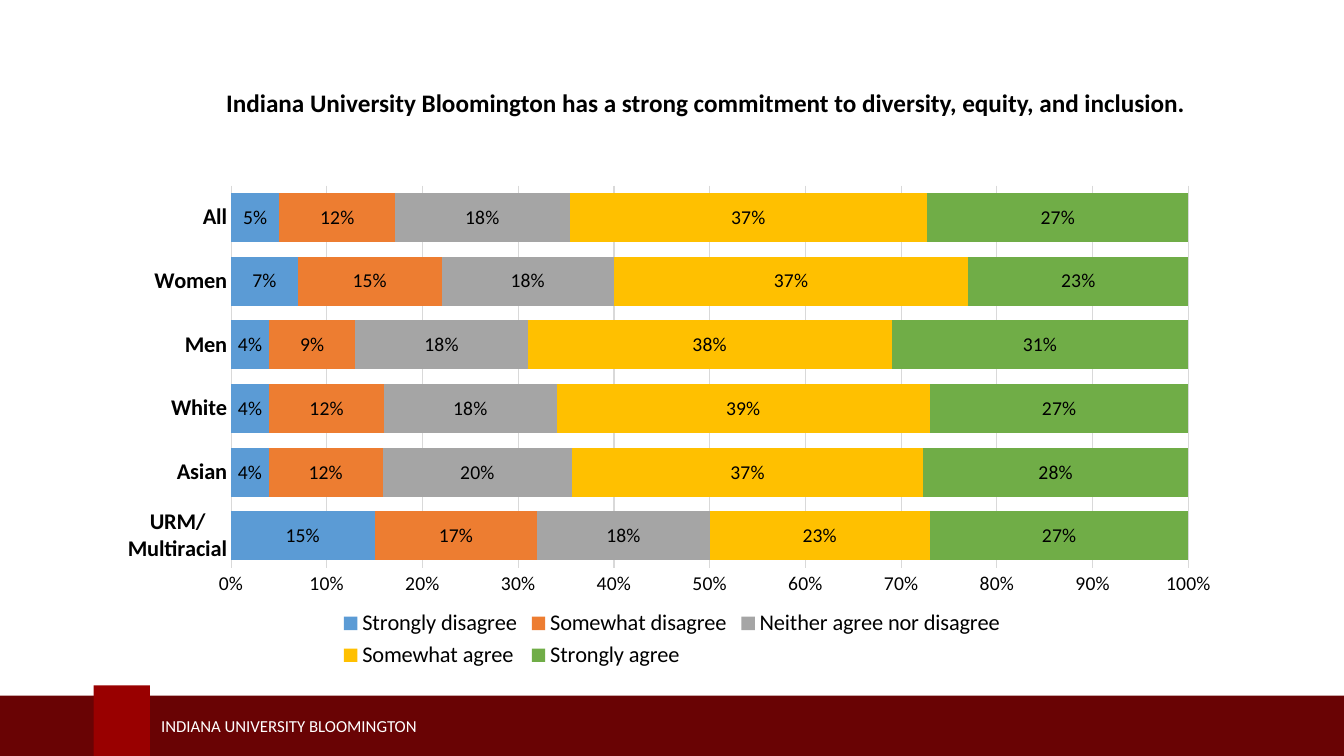
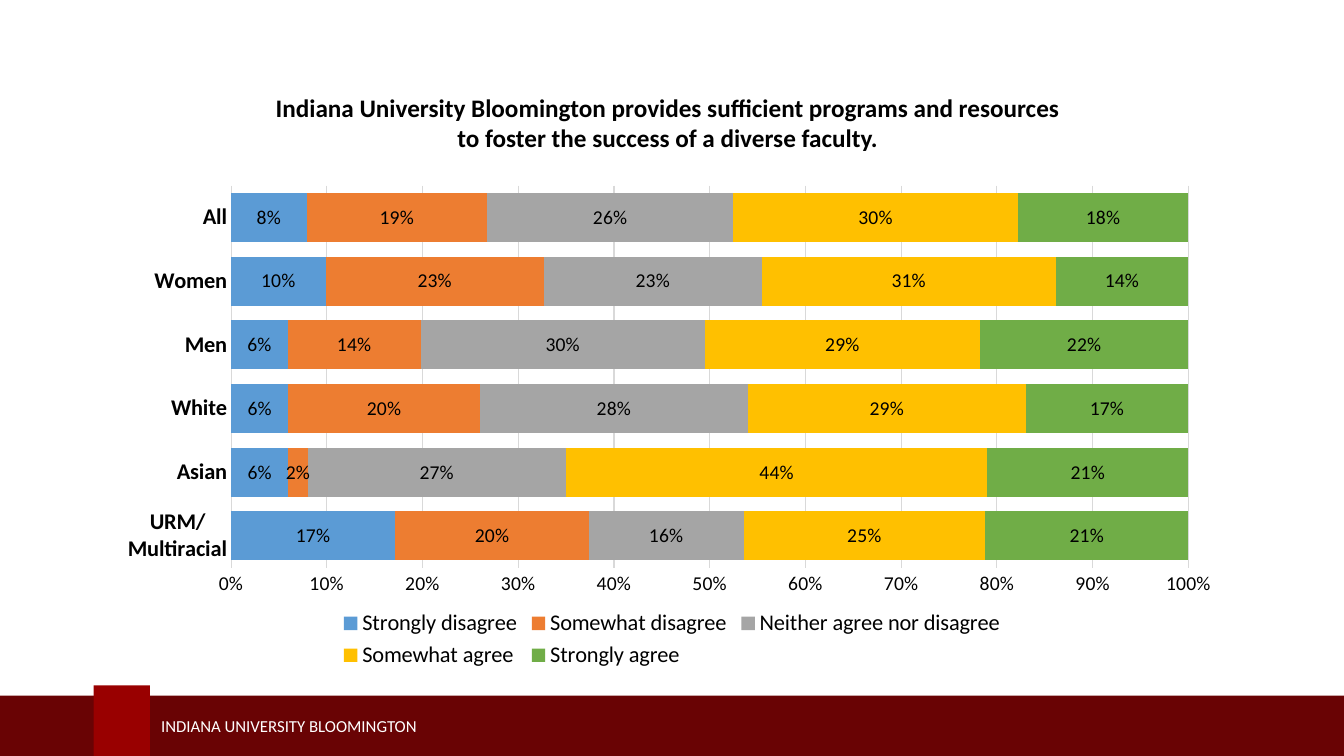
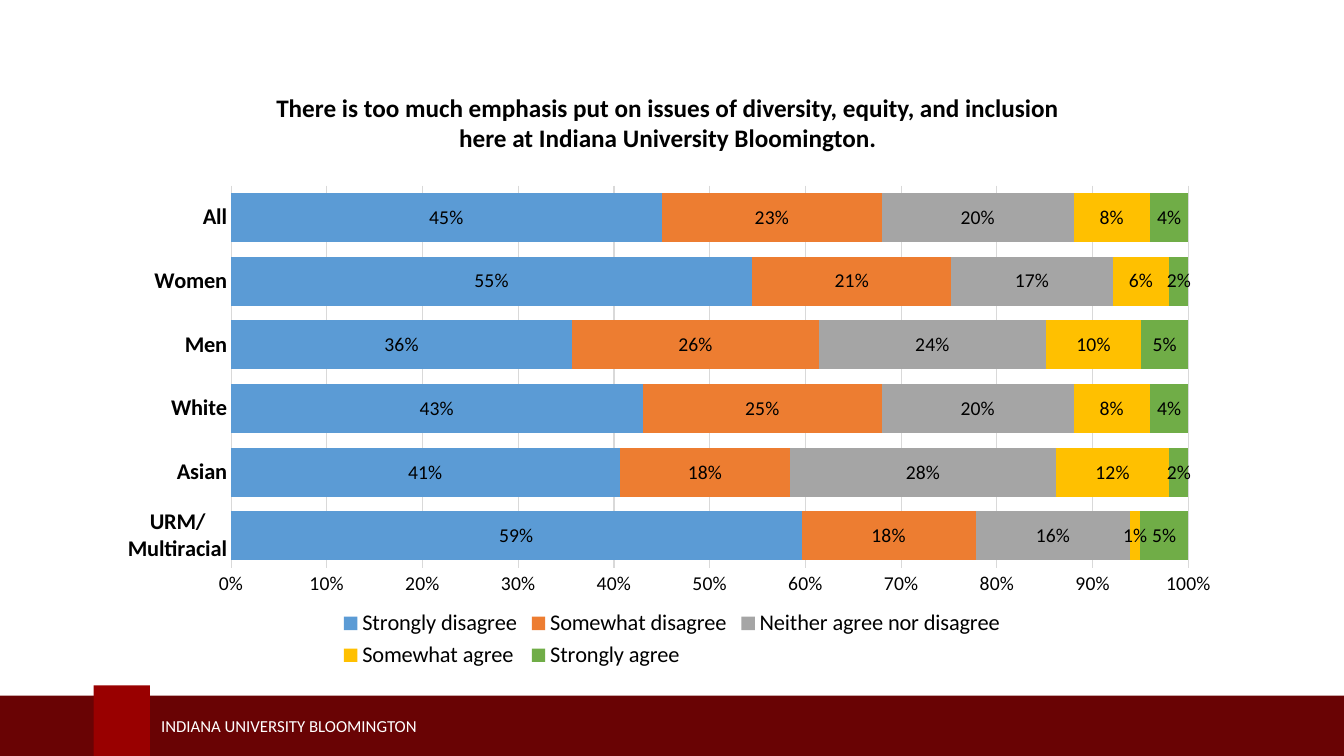
from dataclasses import dataclass

from lxml import etree
from pptx import Presentation
from pptx.chart.data import CategoryChartData
from pptx.dml.color import RGBColor
from pptx.enum import chart as kinds, shapes, text
from pptx.oxml.ns import qn
from pptx.util import Cm, Pt


@dataclass(frozen=True)
class Theme:
    font: str = "Calibri"
    ink: str = "000000"
    pale: str = "FFFFFF"
    grid: str = "D9D9D9"
    band: str = "690304"
    tab: str = "990000"
    bars: tuple = ("5B9BD5", "ED7D31", "A5A5A5", "FFC000", "70AD47")
    head: int = 18
    key: int = 16
    label: int = 14
    foot: int = 12
    wide: float = 33.87
    high: float = 19.05


THEME = Theme()
ANSWERS = ("Strongly disagree", "Somewhat disagree", "Neither agree nor disagree",
           "Somewhat agree", "Strongly agree")
GROUPS = ("URM/\nMultiracial", "Asian", "White", "Men", "Women", "All")

# Each entry: title, title left and top in cm, percentages by answer and group.
POLLS = (
    ("Indiana University Bloomington has a strong commitment to diversity, equity, and inclusion.",
     4.79, 2.2,
     ((15, 4, 4, 4, 7, 5),
      (17, 12, 12, 9, 15, 12),
      (18, 20, 18, 18, 18, 18),
      (23, 37, 39, 38, 37, 37),
      (27, 28, 27, 31, 23, 27))),
    ("Indiana University Bloomington provides sufficient programs and resources\v"
     "to foster the success of a diverse faculty.",
     3.83, 2.33,
     ((17, 6, 6, 6, 10, 8),
      (20, 2, 20, 14, 23, 19),
      (16, 27, 28, 30, 23, 26),
      (25, 44, 29, 29, 31, 30),
      (21, 21, 17, 22, 14, 18))),
    ("There is too much emphasis put on issues of diversity, equity, and inclusion\v"
     "here at Indiana University Bloomington.",
     3.83, 2.33,
     ((59, 41, 43, 36, 55, 45),
      (18, 18, 25, 26, 21, 23),
      (16, 28, 20, 24, 17, 20),
      (1, 12, 8, 10, 6, 8),
      (5, 2, 4, 5, 2, 4))),
)


def put(item, **values):
    """Set several attributes of one object."""
    for name, value in values.items():
        setattr(item, name, value)


def paint(fill, color):
    fill.solid()
    fill.fore_color.rgb = RGBColor.from_string(color)


def style(font, size, color=THEME.ink, bold=False):
    put(font, name=THEME.font, size=Pt(size), bold=bold)
    font.color.rgb = RGBColor.from_string(color)


def rule(line):
    line.width = Pt(0.75)
    line.color.rgb = RGBColor.from_string(THEME.grid)


def block(slide, left, top, width, color):
    """Draw a plain rectangle that reaches down to the slide's lower edge."""
    shape = slide.shapes.add_shape(shapes.MSO_SHAPE.RECTANGLE, Cm(left), Cm(top),
                                   Cm(width), Cm(THEME.high - top))
    shape.shadow.inherit = False
    paint(shape.fill, color)
    shape.line.fill.background()
    return shape


def sign(slide):
    box = slide.shapes.add_textbox(Cm(3.81), Cm(17.91), Cm(13.39), Cm(0.76))
    put(box.text_frame, word_wrap=True, text="INDIANA UNIVERSITY BLOOMINGTON",
        vertical_anchor=text.MSO_ANCHOR.MIDDLE)
    style(box.text_frame.paragraphs[0].runs[0].font, THEME.foot, THEME.pale)
    return box


def footer(slide, layout):
    """Draw the footer and move it to the layout, so that all slides share it."""
    for item in list(layout.placeholders):
        if item.placeholder_format.type != shapes.PP_PLACEHOLDER.TITLE:
            item.element.getparent().remove(item.element)
    parts = (block(slide, 0, 17.53, THEME.wide, THEME.band),
             block(slide, 2.36, 17.27, 1.42, THEME.tab),
             sign(slide))
    for part in parts:
        layout.shapes.element.append(part.element)


def heading(slide, words, left, top):
    title = slide.shapes.title
    put(title, left=Cm(left), top=Cm(top), width=Cm(26), height=Cm(1.7))
    frame = title.text_frame
    put(frame, text=words, word_wrap=True, auto_size=text.MSO_AUTO_SIZE.NONE,
        vertical_anchor=text.MSO_ANCHOR.TOP,
        margin_left=0, margin_right=0, margin_top=0, margin_bottom=0)
    line = frame.paragraphs[0]
    line.alignment = text.PP_ALIGN.CENTER
    for run in line.runs:
        style(run.font, THEME.head, bold=True)


def place(chart, **spots):
    """Fix the inner plot area, in fractions of the chart."""
    area = chart.element.xpath(".//c:plotArea")[0]
    for old in area.findall(qn("c:layout")):
        area.remove(old)
    layout = etree.Element(qn("c:layout"))
    area.insert(0, layout)
    manual = etree.SubElement(layout, qn("c:manualLayout"))
    marks = dict(layoutTarget="inner", xMode="edge", yMode="edge", **spots)
    for tag, value in marks.items():
        etree.SubElement(manual, qn(f"c:{tag}")).set("val", str(value))


def axes(chart):
    for axis in (chart.category_axis, chart.value_axis):
        put(axis, major_tick_mark=kinds.XL_TICK_MARK.NONE,
            minor_tick_mark=kinds.XL_TICK_MARK.NONE)
    groups, scale = chart.category_axis, chart.value_axis
    style(groups.tick_labels.font, THEME.key, bold=True)
    rule(groups.format.line)
    style(scale.tick_labels.font, THEME.label)
    put(scale, minimum_scale=0, maximum_scale=1, major_unit=0.1, has_major_gridlines=True)
    put(scale.tick_labels, number_format="0%", number_format_is_linked=False)
    scale.format.line.fill.background()
    rule(scale.major_gridlines.format.line)


def bars(slide, rows):
    data = CategoryChartData(number_format="0%")
    data.categories = GROUPS
    for name, row in zip(ANSWERS, rows):
        data.add_series(name, [value / 100 for value in row])
    chart = slide.shapes.add_chart(kinds.XL_CHART_TYPE.BAR_STACKED_100, Cm(1.06), Cm(4.3),
                                   Cm(31.75), Cm(12.67), data).chart
    put(chart, has_title=False, has_legend=True)
    style(chart.font, THEME.label)
    put(chart.legend, position=kinds.XL_LEGEND_POSITION.BOTTOM, include_in_layout=False)
    style(chart.legend.font, THEME.key)
    axes(chart)
    plot = chart.plots[0]
    put(plot, gap_width=30, overlap=100, vary_by_categories=False, has_data_labels=True)
    put(plot.data_labels, show_value=True, number_format="0%", number_format_is_linked=False,
        position=kinds.XL_LABEL_POSITION.CENTER)
    style(plot.data_labels.font, THEME.label)
    for series, color in zip(plot.series, THEME.bars):
        paint(series.format.fill, color)
    place(chart, x=0.15, y=0.03, w=0.76, h=0.76)


def main():
    deck = Presentation()
    put(deck, slide_width=Cm(THEME.wide), slide_height=Cm(THEME.high))
    layout = deck.slide_layouts.get_by_name("Title Only")
    for words, left, top, rows in POLLS:
        slide = deck.slides.add_slide(layout)
        heading(slide, words, left, top)
        bars(slide, rows)
    footer(slide, layout)
    deck.save("out.pptx")


if __name__ == "__main__":
    main()
